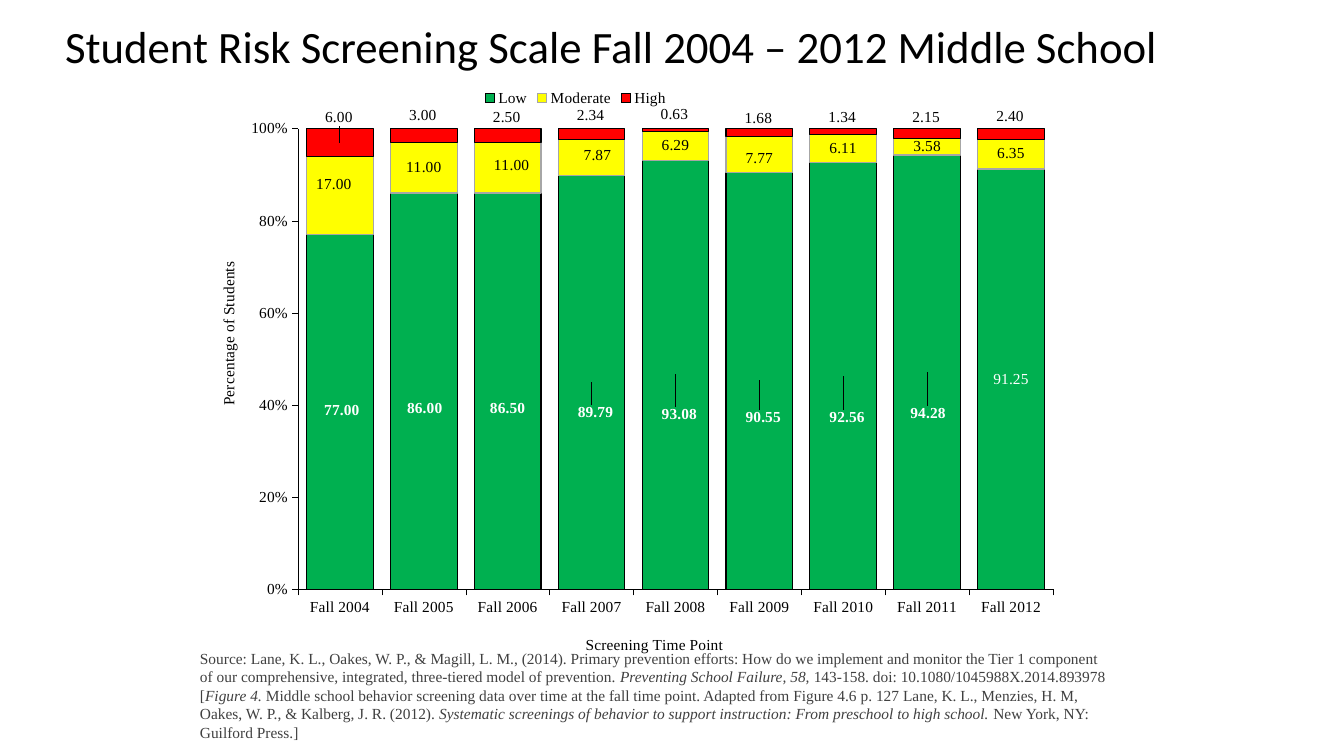
"""Build the student risk screening slide."""
from dataclasses import dataclass

from lxml import etree
from pptx import Presentation
from pptx.chart.data import CategoryChartData
from pptx.dml.color import RGBColor
from pptx.enum.chart import XL_CHART_TYPE, XL_LEGEND_POSITION, XL_TICK_MARK
from pptx.enum.text import MSO_ANCHOR, PP_ALIGN
from pptx.oxml.ns import qn
from pptx.util import Emu, Pt

STACKED = XL_CHART_TYPE.COLUMN_STACKED_100
LEGEND_TOP = XL_LEGEND_POSITION.TOP
TICK_OUT, TICK_NONE = XL_TICK_MARK.OUTSIDE, XL_TICK_MARK.NONE
LEFT, MIDDLE = PP_ALIGN.LEFT, MSO_ANCHOR.MIDDLE
EMU_PER_PX = 914400 / 100.8


@dataclass(frozen=True)
class Theme:
    """Colours, fonts and type sizes of the slide."""

    ink: str = "000000"
    white: str = "FFFFFF"
    source_grey: str = "404040"
    low: str = "00B050"
    moderate: str = "FFFF00"
    moderate_edge: str = "A6A6A6"
    high: str = "FF0000"
    title_font: str = "Calibri"
    body_font: str = "Times New Roman"
    title_size: int = 32
    body_size: int = 11


@dataclass(frozen=True)
class RiskLevel:
    """One stacked series; each label is its text, shift right and centre height in px."""

    name: str
    shares: tuple
    fill: str
    edge: str
    label_color: str
    labels: tuple
    bold_count: int = 0


THEME = Theme()
SLIDE = (1344, 756)
TITLE_BOX = (55, -24, 1274, 146)
CHART_BOX = (99, 76, 1067, 582)
PLOT_BOX = (298, 129, 755, 464)
SOURCE_BOX = (190, 644, 928, 104)
YEARS = range(2004, 2013)
LEVELS = (
    RiskLevel(
        "Low",
        (0.77, 0.86, 0.86, 0.8979, 0.9308, 0.9055, 0.9256, 0.9428, 0.9125),
        THEME.low, THEME.ink, THEME.white,
        (("77.00", 2, 413), ("86.00", 1, 411), ("86.50", 0, 411),
         ("89.79", 4, 415), ("93.08", 4, 417), ("90.55", 4, 420),
         ("92.56", 4, 420), ("94.28", 1, 416), ("91.25", 0, 381)),
        bold_count=8,
    ),
    RiskLevel(
        "Moderate",
        (0.17, 0.11, 0.11, 0.0787, 0.0629, 0.0777, 0.0611, 0.0358, 0.0635),
        THEME.moderate, THEME.moderate_edge, THEME.ink,
        (("17.00", -6, 185), ("11.00", 0, 168), ("11.00", 4, 166),
         ("7.87", 6, 156), ("6.29", 0, 146), ("7.77", 0, 159),
         ("6.11", 0, 149), ("3.58", 0, 147), ("6.35", 0, 154)),
    ),
    RiskLevel(
        "High",
        (0.06, 0.03, 0.03, 0.0234, 0.0063, 0.0168, 0.0134, 0.0215, 0.024),
        THEME.high, THEME.ink, THEME.ink,
        (("6.00", -1, 118), ("3.00", -1, 116), ("2.50", -1, 118),
         ("2.34", -1, 116), ("0.63", -1, 115), ("1.68", -1, 119),
         ("1.34", -1, 118), ("2.15", -1, 118), ("2.40", -1, 117)),
    ),
)
SOURCE_RUNS = (
    ("Source: Lane, K. L., Oakes, W. P., & Magill, L. M., (2014). Primary prevention "
     "efforts: How do we implement and monitor the Tier 1 component of our "
     "comprehensive, integrated, three-tiered model of prevention. ", False),
    ("Preventing School Failure, 58, ", True),
    ("143-158. doi: 10.1080/1045988X.2014.893978 [", False),
    ("Figure 4.", True),
    (" Middle school behavior screening data over time at the fall time point. "
     "Adapted from Figure 4.6 p. 127 Lane, K. L., Menzies, H. M, Oakes, W. P., & "
     "Kalberg, J. R. (2012). ", False),
    ("Systematic screenings of behavior to support instruction: From preschool to "
     "high school.", True),
    (" New York, NY: Guilford Press.]", False),
)


def px(length):
    """Turn pixels into EMU."""
    return Emu(round(length * EMU_PER_PX))


def style_font(font, size, name, color, bold=False):
    """Set the face, size, colour and weight of a font."""
    font.size, font.name, font.bold = Pt(size), name, bold
    font.color.rgb = RGBColor.from_string(color)


def set_layout(parent, after, **settings):
    """Give a chart part a manual layout, placed after the named child."""
    for old_layout in parent.findall(qn("c:layout")):
        parent.remove(old_layout)
    layout = etree.Element(qn("c:layout"))
    manual = etree.SubElement(layout, qn("c:manualLayout"))
    for key, value in settings.items():
        text = value if isinstance(value, str) else f"{value:.4f}"
        etree.SubElement(manual, qn(f"c:{key}")).set("val", text)
    if after:
        parent.find(qn(after)).addnext(layout)
    else:
        parent.insert(0, layout)


def chart_position(left, top):
    """Express a slide position as edge fractions of the chart."""
    return {"xMode": "edge", "yMode": "edge",
            "x": (left - CHART_BOX[0]) / CHART_BOX[2],
            "y": (top - CHART_BOX[1]) / CHART_BOX[3]}


def add_title(slide, text):
    """Fill and place the slide title."""
    title = slide.shapes.title
    title.left, title.top, title.width, title.height = map(px, TITLE_BOX)
    frame = title.text_frame
    frame.text, frame.vertical_anchor = text, MIDDLE
    heading = frame.paragraphs[0]
    heading.alignment, heading.line_spacing = LEFT, 0.9
    style_font(heading.font, THEME.title_size, THEME.title_font, THEME.ink)


def style_axis(axis, title, left, top):
    """Format an axis and put its title at a slide position."""
    axis.has_major_gridlines = False
    axis.major_tick_mark, axis.minor_tick_mark = TICK_OUT, TICK_NONE
    axis.format.line.color.rgb = RGBColor.from_string(THEME.ink)
    axis.format.line.width = Pt(0.21)
    axis_title = axis.axis_title
    axis_title.text_frame.text = title
    style_font(axis_title.text_frame.paragraphs[0].font,
               THEME.body_size, THEME.body_font, THEME.ink)
    set_layout(axis_title._element, "c:tx", **chart_position(left, top))


def style_level(series, level, bases):
    """Colour a risk level and place its labels relative to segment centres."""
    series.format.fill.solid()
    series.format.fill.fore_color.rgb = RGBColor.from_string(level.fill)
    series.format.line.color.rgb = RGBColor.from_string(level.edge)
    series.format.line.width = Pt(0.83)
    series.data_labels.show_value = True
    for index, (text, shift, height) in enumerate(level.labels):
        frame = series.points[index].data_label.text_frame
        frame.text = text
        style_font(frame.paragraphs[0].runs[0].font, THEME.body_size,
                   THEME.body_font, level.label_color, index < level.bold_count)
        middle = bases[index] + level.shares[index] / 2
        segment_height = PLOT_BOX[1] + (1 - middle) * PLOT_BOX[3]
        label = series.data_labels._element.findall(qn("c:dLbl"))[-1]
        set_layout(label, "c:idx", x=shift / CHART_BOX[2],
                   y=(height - segment_height) / CHART_BOX[3])


def add_screening_chart(slide):
    """Add the stacked chart of risk levels by year."""
    data = CategoryChartData(number_format="0.00%")
    data.categories = [f"Fall {year}" for year in YEARS]
    for level in LEVELS:
        data.add_series(level.name, level.shares)
    chart = slide.shapes.add_chart(STACKED, *map(px, CHART_BOX), data).chart
    chart.has_title = False
    style_font(chart.font, THEME.body_size, THEME.body_font, THEME.ink)
    plot = chart.plots[0]
    plot.gap_width, plot.overlap, plot.vary_by_categories = 26, 100, False
    bases = [0] * len(YEARS)
    for series, level in zip(plot.series, LEVELS):
        style_level(series, level, bases)
        bases = [base + share for base, share in zip(bases, level.shares)]
    style_axis(chart.category_axis, "Screening Time Point", 583, 636)
    style_axis(chart.value_axis, "Percentage of Students", 216, 261)
    chart.value_axis.major_unit = 0.2
    chart.value_axis.tick_labels.number_format = "0%"
    chart.value_axis.tick_labels.number_format_is_linked = False
    chart.has_legend = True
    chart.legend.position = LEGEND_TOP
    chart.legend.include_in_layout = False
    set_layout(chart.legend._element, "c:legendPos", **chart_position(480, 86))
    plot_area = chart._chartSpace.find(".//" + qn("c:plotArea"))
    set_layout(plot_area, None, layoutTarget="inner", **chart_position(*PLOT_BOX[:2]),
               w=PLOT_BOX[2] / CHART_BOX[2], h=PLOT_BOX[3] / CHART_BOX[3])


def add_source(slide):
    """Add the citation under the chart."""
    frame = slide.shapes.add_textbox(*map(px, SOURCE_BOX)).text_frame
    frame.word_wrap = True
    citation = frame.paragraphs[0]
    style_font(citation.font, THEME.body_size, THEME.body_font, THEME.source_grey)
    for text, italic in SOURCE_RUNS:
        run = citation.add_run()
        run.text, run.font.italic = text, italic


def main():
    """Build and save the slide."""
    deck = Presentation()
    deck.slide_width, deck.slide_height = map(px, SLIDE)
    slide = deck.slides.add_slide(deck.slide_layouts[5])
    add_title(slide, "Student Risk Screening Scale Fall 2004 – 2012 Middle School")
    add_screening_chart(slide)
    add_source(slide)
    deck.save("out.pptx")


if __name__ == "__main__":
    main()
